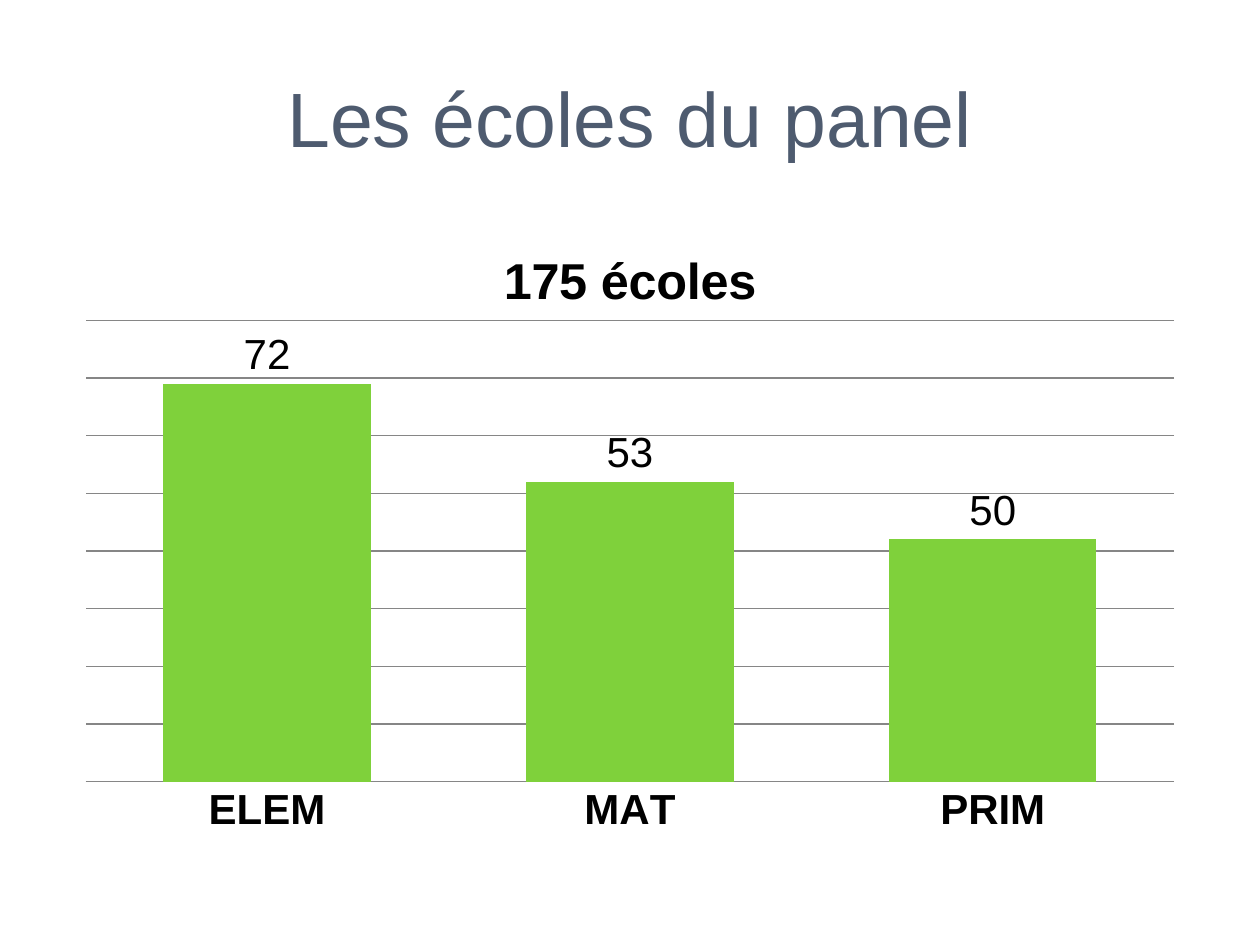
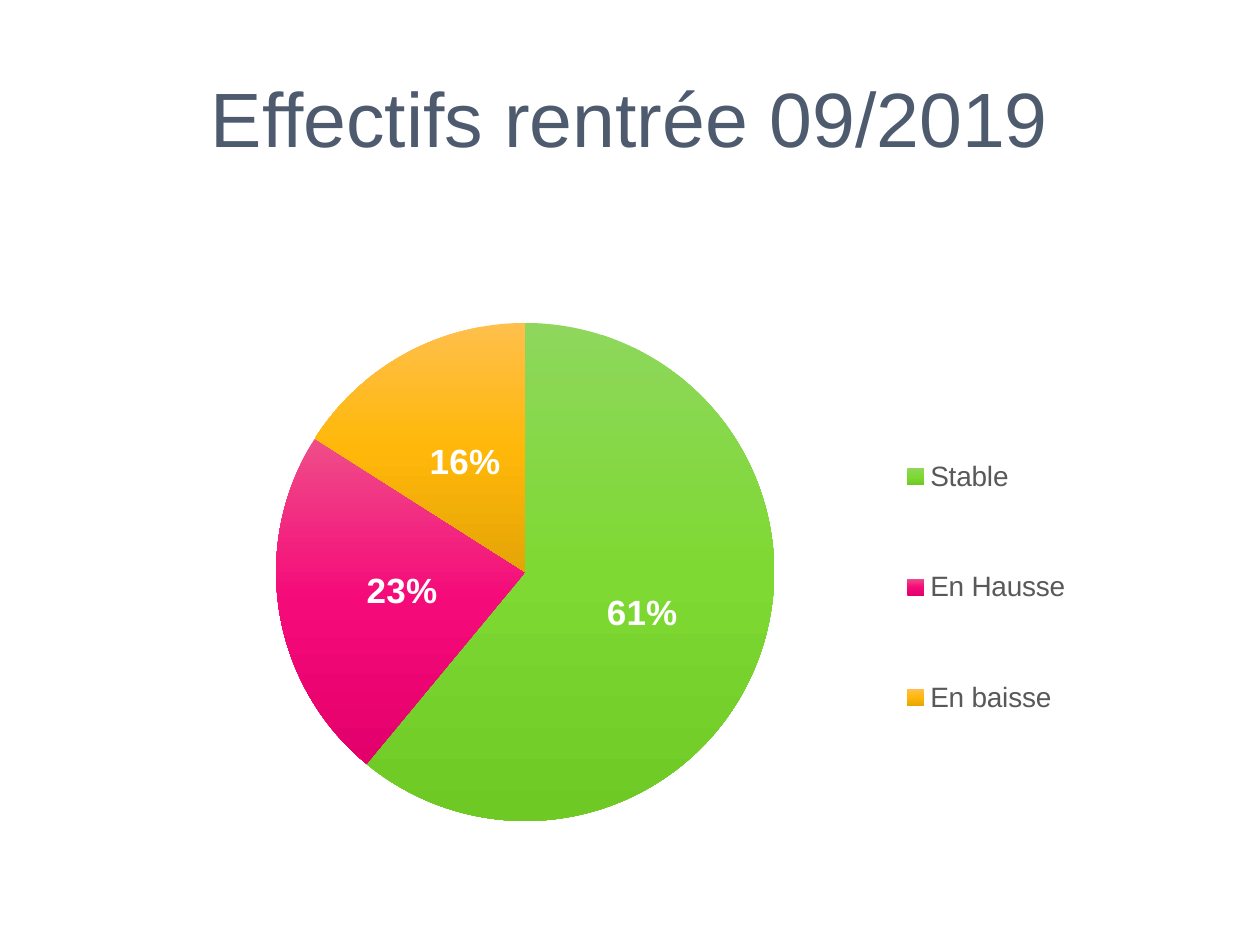
"""Build two slides on a school panel: school types and enrolment trends."""
from copy import deepcopy
from dataclasses import dataclass

from lxml import etree
from pptx import Presentation
from pptx.chart.chart import Chart
from pptx.chart.data import CategoryChartData as ChartData
from pptx.dml.color import RGBColor as Color
from pptx.dml.fill import FillFormat
from pptx.enum.chart import XL_CHART_TYPE as ChartType
from pptx.enum.chart import XL_LABEL_POSITION as LabelPosition
from pptx.enum.chart import XL_LEGEND_POSITION as LegendPosition
from pptx.enum.chart import XL_TICK_LABEL_POSITION as TickLabelPosition
from pptx.enum.chart import XL_TICK_MARK as TickMark
from pptx.enum.text import MSO_ANCHOR as Anchor
from pptx.enum.text import PP_ALIGN as Align
from pptx.oxml.ns import qn
from pptx.slide import Slide
from pptx.text.text import Font
from pptx.util import Pt


@dataclass(frozen=True)
class Theme:
    font: str = "Arial"
    title: str = "4E5B6F"
    text: str = "000000"
    legend: str = "595959"
    on_slice: str = "FFFFFF"
    grid: str = "868686"
    bar: str = "7FD13B"
    title_size: float = 44
    bar_text_size: float = 24
    slice_text_size: float = 20
    legend_size: float = 16
    base_size: float = 10


@dataclass(frozen=True)
class Box:
    left: float
    top: float
    width: float
    height: float

    def points(self) -> tuple[Pt, Pt, Pt, Pt]:
        return Pt(self.left), Pt(self.top), Pt(self.width), Pt(self.height)


@dataclass(frozen=True)
class SchoolType:
    name: str
    bar_value: int
    label: str


@dataclass(frozen=True)
class Trend:
    name: str
    share: int
    gradient: tuple[str, str, str]


THEME = Theme()
TITLE_BOX = Box(36, 21.6, 648, 90)
BAR_BOX = Box(36, 126, 648, 356.4)
BAR_PLOT = Box(0.02, 0.16, 0.96, 0.74)
PIE_BOX = Box(105.12, 145.44, 527.04, 345.6)
PIE_PLOT = Box(0.1, 0.11, 0.54, 0.83)
PIE_LEGEND = Box(0.77, 0.21, 0.2, 0.68)
SCHOOL_TYPES = [
    SchoolType("ELEM", 69, "72"),
    SchoolType("MAT", 52, "53"),
    SchoolType("PRIM", 42, "50"),
]
TRENDS = [
    Trend("Stable", 61, ("8ED75C", "7ED933", "6FC925")),
    Trend("En Hausse", 23, ("EF4D89", "F50A79", "E3006B")),
    Trend("En baisse", 16, ("FFBF4C", "FFB809", "E5A506")),
]


def style_font(font: Font, size: float, color: str, bold: bool | None = None) -> None:
    font.name = THEME.font
    font.size = Pt(size)
    font.bold = bold
    font.color.rgb = Color.from_string(color)


def add_titled_slide(presentation: Presentation, text: str) -> Slide:
    slide = presentation.slides.add_slide(presentation.slide_layouts[5])
    title = slide.shapes.title
    title.left, title.top, title.width, title.height = TITLE_BOX.points()
    frame = title.text_frame
    frame.vertical_anchor = Anchor.MIDDLE
    paragraph = frame.paragraphs[0]
    paragraph.alignment = Align.CENTER
    run = paragraph.add_run()
    run.text = text
    style_font(run.font, THEME.title_size, THEME.title)
    return slide


def set_layout(parent: etree._Element, after: str, box: Box, inner: bool = False) -> None:
    for old in parent.findall(qn("c:layout")):
        parent.remove(old)
    layout = etree.Element(qn("c:layout"))
    manual = etree.SubElement(layout, qn("c:manualLayout"))
    settings = {"layoutTarget": "inner"} if inner else {}
    settings |= {"xMode": "edge", "yMode": "edge", "x": box.left, "y": box.top,
                 "w": box.width, "h": box.height}
    for name, value in settings.items():
        etree.SubElement(manual, qn(f"c:{name}")).set("val", str(value))
    previous = parent.find(qn(after)) if after else None
    if previous is None:
        parent.insert(0, layout)
    else:
        previous.addnext(layout)


def add_chart(slide: Slide, kind: ChartType, box: Box, plot_box: Box,
              names: list[str], values: list[int], size: float) -> Chart:
    data = ChartData()
    data.categories = names
    data.add_series("Series 1", values)
    chart = slide.shapes.add_chart(kind, *box.points(), data).chart
    style_font(chart.font, size, THEME.text)
    chart.has_title = False
    chart.has_legend = False
    set_layout(chart._chartSpace.chart.plotArea, "", plot_box, inner=True)
    return chart


def fill_gradient(fill: FillFormat, colors: tuple[str, str, str]) -> None:
    fill.gradient()
    fill.gradient_angle = 270
    first = fill.gradient_stops[0]._gs
    first.addnext(deepcopy(first))
    for stop, color, position in zip(fill.gradient_stops, colors, (0, 0.5, 1)):
        stop.color.rgb = Color.from_string(color)
        stop.position = position


def build_schools(presentation: Presentation) -> None:
    slide = add_titled_slide(presentation, "Les écoles du panel")
    chart = add_chart(slide, ChartType.COLUMN_CLUSTERED, BAR_BOX, BAR_PLOT,
                      [school.name for school in SCHOOL_TYPES],
                      [school.bar_value for school in SCHOOL_TYPES],
                      THEME.bar_text_size)
    chart.has_title = True
    chart.chart_title.include_in_layout = False
    chart.chart_title.text_frame.paragraphs[0].add_run().text = "175 écoles"

    value_axis = chart.value_axis
    value_axis.minimum_scale, value_axis.maximum_scale = 0, 80
    value_axis.major_unit = 10
    value_axis.visible = False
    category_axis = chart.category_axis
    category_axis.major_tick_mark = TickMark.NONE
    category_axis.tick_label_position = TickLabelPosition.NEXT_TO_AXIS
    style_font(category_axis.tick_labels.font, THEME.bar_text_size, THEME.text, bold=True)
    for line in (value_axis.major_gridlines.format.line, category_axis.format.line):
        line.width = Pt(0.75)
        line.color.rgb = Color.from_string(THEME.grid)

    plot = chart.plots[0]
    plot.gap_width, plot.overlap = 75, -25
    plot.vary_by_categories = False
    series = plot.series[0]
    series.format.fill.solid()
    series.format.fill.fore_color.rgb = Color.from_string(THEME.bar)
    series.data_labels.show_value = True
    style_font(series.data_labels.font, THEME.bar_text_size, THEME.text, bold=True)
    for index, school in enumerate(SCHOOL_TYPES):
        label = series.points[index].data_label
        run = label.text_frame.paragraphs[0].add_run()
        run.text = school.label
        style_font(run.font, THEME.bar_text_size, THEME.text, bold=False)
        label.position = LabelPosition.OUTSIDE_END


def build_trends(presentation: Presentation) -> None:
    slide = add_titled_slide(presentation, "Effectifs rentrée 09/2019")
    chart = add_chart(slide, ChartType.PIE, PIE_BOX, PIE_PLOT,
                      [trend.name for trend in TRENDS],
                      [trend.share for trend in TRENDS], THEME.base_size)
    plot = chart.plots[0]
    plot.vary_by_categories = True
    for index, trend in enumerate(TRENDS):
        fill_gradient(plot.series[0].points[index].format.fill, trend.gradient)

    plot.has_data_labels = True
    labels = plot.data_labels
    labels.show_value = False
    labels.show_percentage = True
    labels.number_format, labels.number_format_is_linked = "0%", False
    labels.position = LabelPosition.CENTER
    style_font(labels.font, THEME.slice_text_size, THEME.on_slice, bold=True)

    chart.has_legend = True
    legend = chart.legend
    legend.position = LegendPosition.BOTTOM
    legend.include_in_layout = False
    style_font(legend.font, THEME.legend_size, THEME.legend)
    set_layout(legend._element, "c:legendPos", PIE_LEGEND)


def main() -> None:
    presentation = Presentation()
    presentation.slide_width, presentation.slide_height = Pt(720), Pt(540)
    build_schools(presentation)
    build_trends(presentation)
    presentation.save("out.pptx")


if __name__ == "__main__":
    main()
